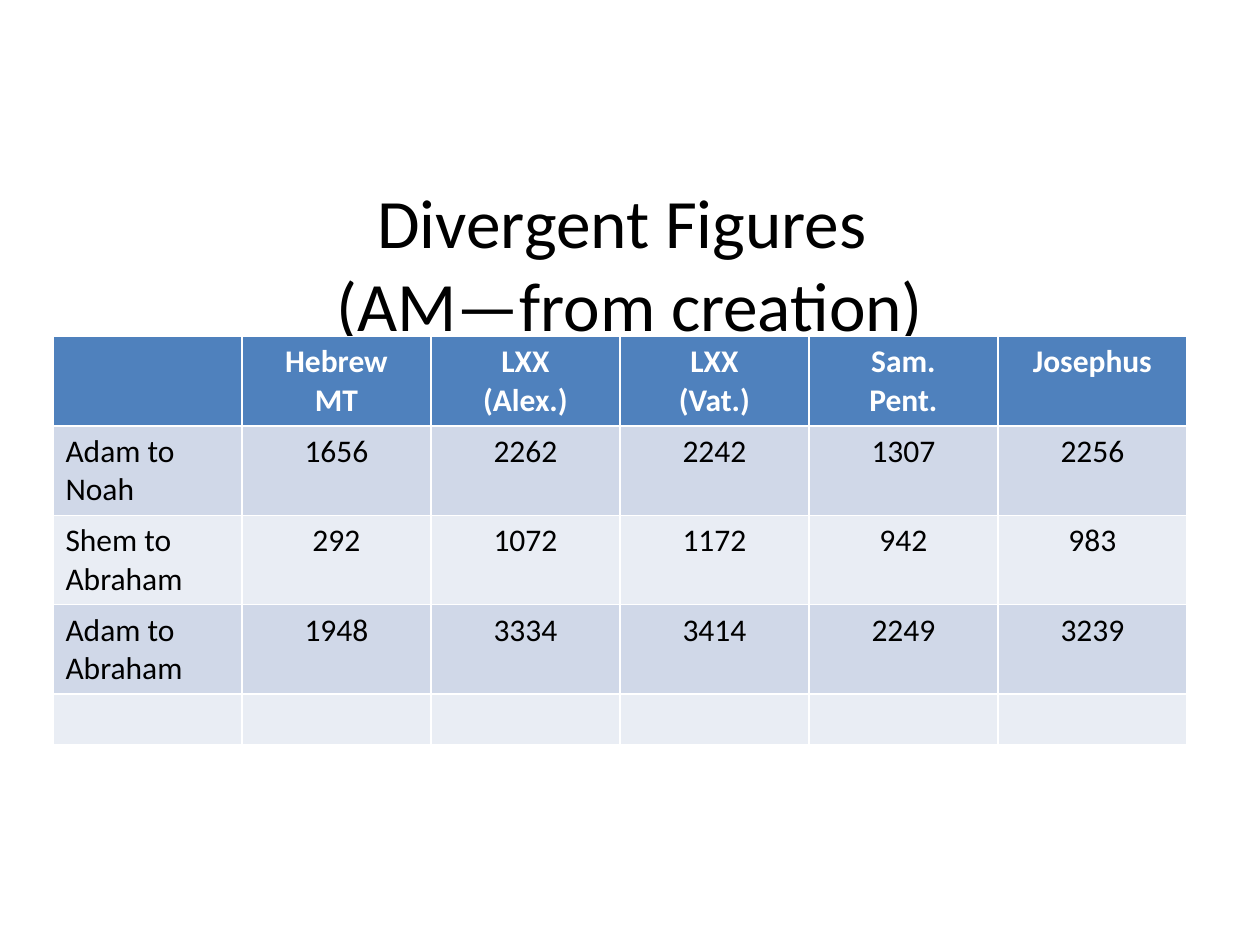
from pptx import Presentation
from pptx.dml.color import RGBColor
from pptx.enum.text import MSO_ANCHOR, PP_ALIGN
from pptx.util import Inches, Pt

LEFT, MID = PP_ALIGN.LEFT, PP_ALIGN.CENTER
MIDDLE = MSO_ANCHOR.MIDDLE

FONT = "Calibri"
HEX = {"head": "4F81BD", "dark": "D0D8E8", "light": "E9EDF4",
       "white": "FFFFFF", "black": "000000"}

TITLE = "Divergent Figures \n(AM—from creation)"
ROWS = [
    ["", "Hebrew\nMT", "LXX\n(Alex.)", "LXX\n(Vat.)", "Sam.\nPent.", "Josephus"],
    ["Adam to Noah", "1656", "2262", "2242", "1307", "2256"],
    ["Shem to Abraham", "292", "1072", "1172", "942", "983"],
    ["Adam to Abraham", "1948", "3334", "3414", "2249", "3239"],
    [""] * 6,
]
COL, TALL, SHORT = 1.5, 0.71, 0.4


def write(frame, text, size=18, color="black", bold=False, align=MID):
    frame.text = text
    for para in frame.paragraphs:
        para.alignment = align
        for run in para.runs:
            font = run.font
            font.name, font.size, font.bold = FONT, Pt(size), bold
            font.color.rgb = RGBColor.from_string(HEX[color])


deck = Presentation()
deck.slide_width, deck.slide_height = Inches(10), Inches(7.5)
slide = deck.slides.add_slide(deck.slide_layouts[6])

title = slide.shapes.add_textbox(Inches(0.5), Inches(1.42), Inches(9), Inches(1.33))
title.text_frame.word_wrap = True
title.text_frame.vertical_anchor = MIDDLE
write(title.text_frame, TITLE, size=39.6)

highs = [TALL if any(row) else SHORT for row in ROWS]
grid = slide.shapes.add_table(
    len(ROWS), len(ROWS[0]), Inches(0.42), Inches(2.67),
    Inches(COL * len(ROWS[0])), Inches(sum(highs))).table

for r, row in enumerate(ROWS):
    grid.rows[r].height = Inches(highs[r])
    head = r == 0
    tint = "head" if head else "dark" if r % 2 else "light"
    for c, text in enumerate(row):
        cell = grid.cell(r, c)
        cell.fill.solid()
        cell.fill.fore_color.rgb = RGBColor.from_string(HEX[tint])
        write(cell.text_frame, text, color="white" if head else "black",
              bold=head, align=MID if c else LEFT)

deck.save("out.pptx")
